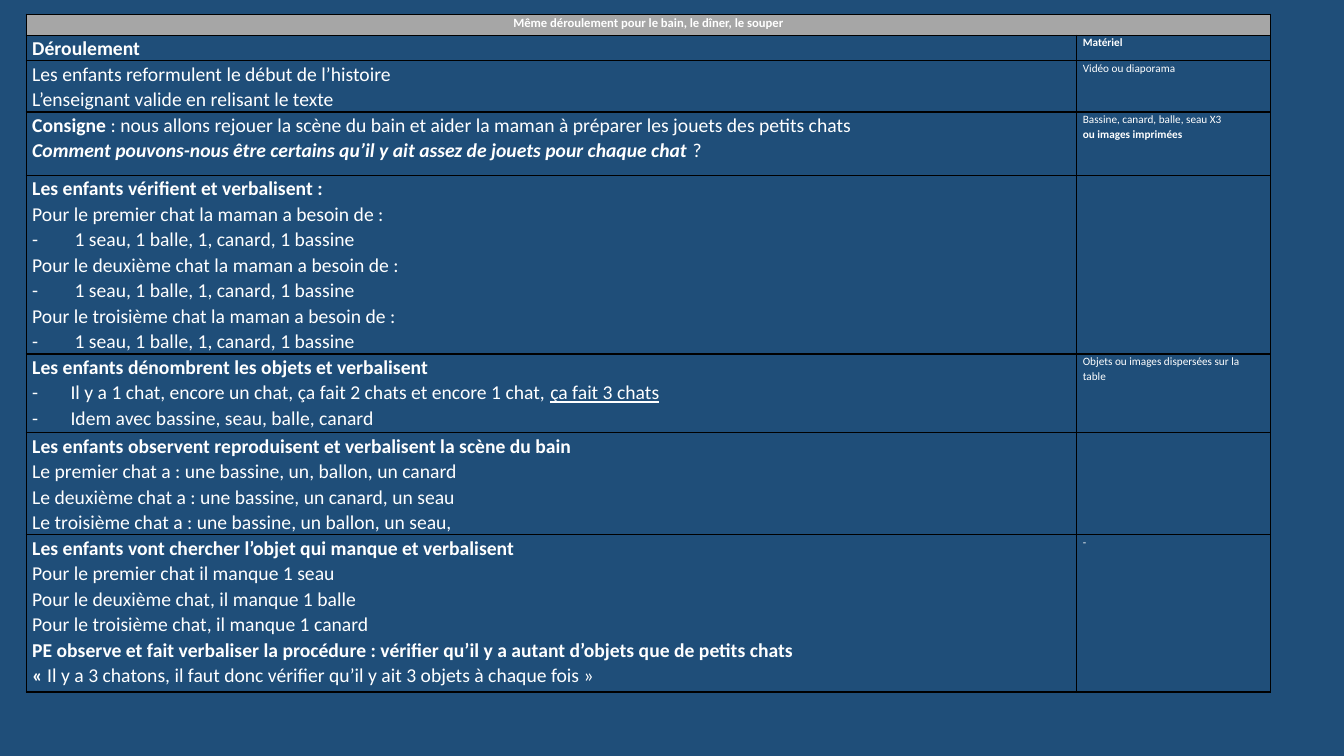
from lxml import etree
from pptx import Presentation
from pptx.dml.color import RGBColor
from pptx.enum import text
from pptx.oxml.ns import qn
from pptx.util import Inches, Pt

NAVY = RGBColor(0x1F, 0x4E, 0x79)
GRAY = RGBColor(0xA6, 0xA6, 0xA6)
WHITE = RGBColor(0xFF, 0xFF, 0xFF)
BLACK = RGBColor(0, 0, 0)
FONT = "Calibri"
COLUMN_WIDTHS = [10.42, 1.92]
ROW_HEIGHTS = [0.21, 0.2, 0.39, 0.63, 1.37, 0.78, 0.98, 1.56]
TITLE_SIZE, STEP_SIZE, MATERIAL_SIZE = 9, 14, 8


def plain(words):
    return [(words, "")], 0


def bold(words):
    return [(words, "b")], 0


def dash(*runs, indent=0.38):
    return list(runs), indent


def cat_needs(rank):
    return [plain(f"Pour le {rank} chat la maman a besoin de\u00a0:"),
            dash(("1 seau, 1 balle, 1, canard, 1 bassine", ""), indent=0.42)]


TITLE = [bold("Même déroulement pour le bain, le dîner, le souper")]
STEPS = [
    ([bold("Déroulement")], [bold("Matériel")]),
    ([plain("Les enfants reformulent le début de l’histoire"),
      plain("L’enseignant valide en relisant le texte")],
     [plain("Vidéo ou diaporama")]),
    ([([("Consigne\u00a0", "b"),
        (": nous allons rejouer la scène du bain et aider la maman à préparer "
         "les jouets des petits chats", "")], 0),
      ([("Comment pouvons-nous être certains qu’il y ait assez de jouets "
         "pour chaque chat", "bi"), ("\u00a0?", "")], 0)],
     [plain("Bassine, canard, balle, seau X3"), bold("ou images imprimées")]),
    ([bold("Les enfants vérifient et verbalisent\u00a0:"),
      *cat_needs("premier"), *cat_needs("deuxième"), *cat_needs("troisième")], []),
    ([bold("Les enfants dénombrent les objets et verbalisent"),
      dash(("Il y a 1 chat, encore un chat, ça fait 2 chats et encore 1 chat, ", ""),
           ("ça fait 3 chats", "u")),
      dash(("Idem avec bassine, seau, balle, canard", ""))],
     [plain("Objets ou images dispersées sur la table")]),
    ([bold("Les enfants observent reproduisent et verbalisent la scène du bain"),
      plain("Le premier chat a\u00a0: une bassine, un, ballon, un canard"),
      plain("Le deuxième chat a\u00a0: une bassine, un canard, un seau"),
      plain("Le troisième chat a\u00a0: une bassine, un ballon, un seau,")], []),
    ([bold("Les enfants vont chercher l’objet qui manque et verbalisent"),
      plain("Pour le premier chat il manque\u00a01 seau"),
      plain("Pour le deuxième chat, il manque 1 balle"),
      plain("Pour le troisième chat, il manque 1 canard"),
      bold("PE observe et fait verbaliser la procédure\u00a0: vérifier qu’il y a "
           "autant d’objets que de petits chats"),
      ([("«", "b"), (" Il y a 3 chatons, il faut donc vérifier qu’il y ait "
                     "3 objets à chaque fois\u00a0»", "")], 0)],
     [plain("-")]),
]


def add_dash(paragraph, indent):
    properties = paragraph._p.get_or_add_pPr()
    properties.set("marL", str(Inches(indent)))
    properties.set("indent", str(-Inches(indent)))
    etree.SubElement(properties, qn("a:buFont")).set("typeface", FONT)
    etree.SubElement(properties, qn("a:buChar")).set("char", "-")


def add_borders(cell):
    properties = cell._tc.get_or_add_tcPr()
    for position, side in enumerate(("lnL", "lnR", "lnT", "lnB")):
        line = etree.Element(qn(f"a:{side}"), w=str(Pt(1)))
        fill = etree.SubElement(line, qn("a:solidFill"))
        etree.SubElement(fill, qn("a:srgbClr")).set("val", str(BLACK))
        properties.insert(position, line)


def style_cell(cell):
    cell.margin_left = cell.margin_right = Inches(0.06)
    cell.margin_top = cell.margin_bottom = 0
    cell.fill.background()
    add_borders(cell)


def write_cell(cell, paragraphs, size):
    frame = cell.text_frame
    for index, (runs, indent) in enumerate(paragraphs):
        paragraph = frame.add_paragraph() if index else frame.paragraphs[0]
        paragraph.line_spacing = 1.07
        if indent:
            add_dash(paragraph, indent)
        for words, style in runs:
            run = paragraph.add_run()
            run.text = words
            font = run.font
            font.name, font.size = FONT, Pt(size)
            font.color.rgb = WHITE
            font.bold = "b" in style
            font.italic = "i" in style
            font.underline = "u" in style


def add_lesson_table(slide, left, top, width, height):
    table = slide.shapes.add_table(len(ROW_HEIGHTS), len(COLUMN_WIDTHS), Inches(left),
                                   Inches(top), Inches(width), Inches(height)).table
    table.first_row = table.horz_banding = False
    for column, column_width in zip(table.columns, COLUMN_WIDTHS):
        column.width = Inches(column_width)
    for row, row_height in zip(table.rows, ROW_HEIGHTS):
        row.height = Inches(row_height)
    for cell in table.iter_cells():
        style_cell(cell)
    title = table.cell(0, 0)
    title.merge(table.cell(0, 1))
    title.fill.solid()
    title.fill.fore_color.rgb = GRAY
    write_cell(title, TITLE, TITLE_SIZE)
    title.text_frame.paragraphs[0].alignment = text.PP_ALIGN.CENTER
    for row, (step, material) in enumerate(STEPS, start=1):
        write_cell(table.cell(row, 0), step, STEP_SIZE)
        write_cell(table.cell(row, 1), material, MATERIAL_SIZE)


def main():
    presentation = Presentation()
    presentation.slide_width = Inches(13.33)
    presentation.slide_height = Inches(7.5)
    slide = presentation.slides.add_slide(presentation.slide_layouts[6])
    slide.background.fill.solid()
    slide.background.fill.fore_color.rgb = NAVY
    add_lesson_table(slide, 0.26, 0.14, sum(COLUMN_WIDTHS), sum(ROW_HEIGHTS))
    presentation.save("out.pptx")


if __name__ == "__main__":
    main()
